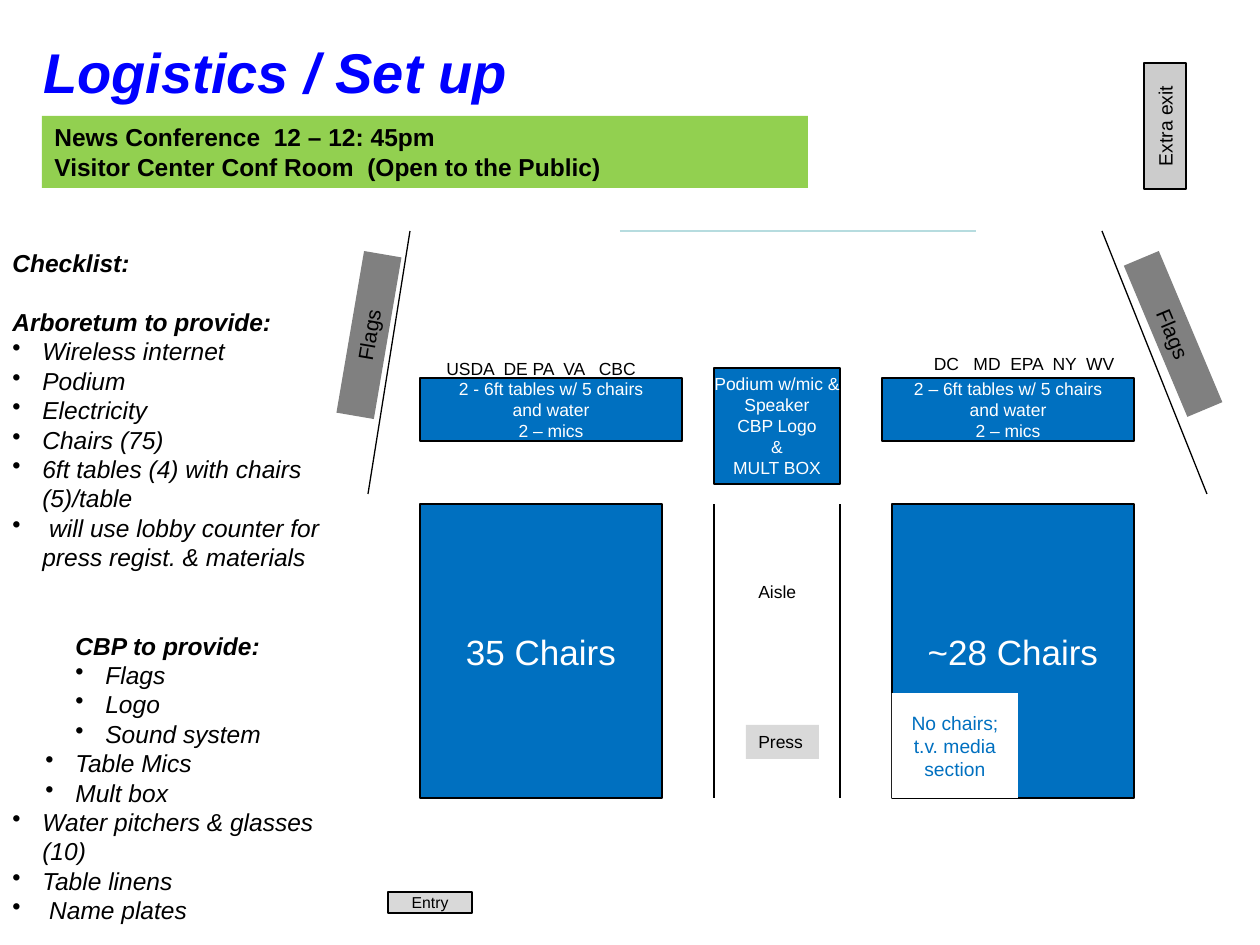
import pptx
import pptx.util
import pptx.dml.color
import pptx.enum.shapes
import pptx.enum.text
from lxml import etree

PX = 914400 / 126
RGB = pptx.dml.color.RGBColor
BLACK, WHITE = RGB(0, 0, 0), RGB(255, 255, 255)
BLUE, TITLE_BLUE = RGB(0x00, 0x70, 0xC0), RGB(0, 0, 255)
GREEN, TEAL = RGB(0x92, 0xD0, 0x50), RGB(0xB6, 0xDC, 0xDF)
LIGHT, SILVER, GRAY = RGB(0xD9, 0xD9, 0xD9), RGB(0xCC, 0xCC, 0xCC), RGB(0x80, 0x80, 0x80)

TITLE = "Logistics / Set up"
SESSION = ["News Conference  12 – 12: 45pm", "Visitor Center Conf Room  (Open to the Public)"]

# heading, gap above in points, left edge in px, items as (text, bullet left edge in px)
CHECKLIST = [
    ("Checklist:", 0, 0, []),
    ("Arboretum to provide:", 16.8, 0, [
        ("Wireless internet", 0), ("Podium", 0), ("Electricity", 0), ("Chairs (75)", 0),
        ("6ft tables (4) with chairs (5)/table", 0),
        (" will use lobby counter for  press regist. & materials", 0)]),
    ("CBP to provide:", 33.6, 63, [
        ("Flags", 63), ("Logo", 63), ("Sound system", 63),
        ("Table Mics", 33), ("Mult box", 33),
        ("Water pitchers & glasses (10)", 0), ("Table linens", 0), (" Name plates", 0)]),
]
BULLET_INDENT = 30

# lines, box in px, fill, text size, text colour, outlined
FURNITURE = [
    (["2 - 6ft tables w/ 5 chairs", "and water", "2 – mics"], (420, 378, 262, 63), BLUE, 10, WHITE, True),
    (["Podium w/mic &", "Speaker", "CBP Logo", "&", "MULT BOX"], (714, 368, 126, 116), BLUE, 10, WHITE, True),
    (["2 – 6ft tables w/ 5 chairs", "and water", "2 – mics"], (882, 378, 252, 63), BLUE, 10, WHITE, True),
    (["35 Chairs"], (420, 504, 242, 294), BLUE, 20, WHITE, True),
    (["~28 Chairs"], (892, 504, 242, 294), BLUE, 20, WHITE, True),
    (["No chairs; t.v. media section"], (892, 693, 126, 105), WHITE, 11, BLUE, False),
    (["Entry"], (388, 892, 84, 21), LIGHT, 9, BLACK, True),
]
SEATED = [("USDA  DE PA  VA   CBC", (399, 347, 284, 42)), ("DC   MD  EPA  NY  WV", (882, 347, 284, 32))]
FLAGS = [((1091, 315, 164, 38), 67.2), ((287, 316, 164, 38), 279.7)]

# x1, y1, x2, y2 in px, colour
WALLS = [(368, 494, 410, 231, BLACK), (1207, 494, 1102, 231, BLACK),
         (714, 504, 714, 798, BLACK), (840, 504, 840, 798, BLACK),
         (620, 231, 976, 231, TEAL)]

ANCHOR = pptx.enum.text.MSO_ANCHOR
ALIGN = pptx.enum.text.PP_ALIGN


def emu(*lengths):
    return [round(length * PX) for length in lengths]


def add_paragraph(frame, text, size, color, align=ALIGN.LEFT, bold=False, italic=False):
    """Fill the frame's first paragraph if it is still empty, else append one."""
    paragraph = frame.paragraphs[-1]
    if paragraph.runs:
        paragraph = frame.add_paragraph()
    paragraph.alignment = align
    run = paragraph.add_run()
    run.text = text
    font = run.font
    font.name, font.size, font.bold, font.italic = "Arial", pptx.util.Pt(size), bold, italic
    font.color.rgb = color
    return paragraph


def indent(paragraph, left, bulleted):
    properties = paragraph._p.get_or_add_pPr()
    hanging = BULLET_INDENT if bulleted else 0
    margin, first = emu(left + hanging, -hanging)
    properties.set("marL", str(margin))
    properties.set("indent", str(first))
    if bulleted:
        namespace = pptx.oxml.ns.qn("a:buChar")
        etree.SubElement(properties, namespace).set("char", "•")


def add_text(slide, box, lines, size, color, align=ALIGN.LEFT, anchor=ANCHOR.TOP, wrap=True, **style):
    frame = slide.shapes.add_textbox(*emu(*box)).text_frame
    frame.word_wrap, frame.vertical_anchor = wrap, anchor
    for line in lines:
        add_paragraph(frame, line, size, color, align, **style)
    return frame


def add_block(slide, box, fill, lines, size, color, outlined=False, align=ALIGN.CENTER,
              anchor=ANCHOR.MIDDLE, wrap=False, rotation=0, bold=False):
    block = slide.shapes.add_shape(pptx.enum.shapes.MSO_SHAPE.RECTANGLE, *emu(*box))
    block.shadow.inherit = False
    block.rotation = rotation
    block.fill.solid()
    block.fill.fore_color.rgb = fill
    if outlined:
        block.line.color.rgb = BLACK
        block.line.width = pptx.util.Pt(0.75)
    else:
        block.line.fill.background()
    frame = block.text_frame
    frame.word_wrap, frame.vertical_anchor = wrap, anchor
    for line in lines:
        add_paragraph(frame, line, size, color, align, bold)


def add_wall(slide, x1, y1, x2, y2, color):
    wall = slide.shapes.add_connector(pptx.enum.shapes.MSO_CONNECTOR.STRAIGHT, *emu(x1, y1, x2, y2))
    wall.line.color.rgb = color
    wall.line.width = pptx.util.Pt(0.75)
    etree.SubElement(wall._element.spPr, pptx.oxml.ns.qn("a:effectLst"))


def add_checklist(slide):
    frame = add_text(slide, (0, 242, 368, 832), [], 14, BLACK)
    for heading, gap, left, items in CHECKLIST:
        paragraph = add_paragraph(frame, heading, 14, BLACK, bold=True, italic=True)
        paragraph.space_before = pptx.util.Pt(gap)
        indent(paragraph, left, False)
        for item, bullet_left in items:
            indent(add_paragraph(frame, item, 14, BLACK, italic=True), bullet_left, True)


def main():
    deck = pptx.Presentation()
    deck.slide_width, deck.slide_height = emu(1260, 945)
    slide = deck.slides.add_slide(deck.slide_layouts[6])

    add_block(slide, (42, 116, 766, 72), GREEN, SESSION, 14, BLACK,
              align=ALIGN.LEFT, anchor=ANCHOR.TOP, wrap=True, bold=True)
    title = add_text(slide, (31, 31, 1176, 79), [TITLE], 32, TITLE_BLUE, bold=True, italic=True)
    title.paragraphs[0].space_before = pptx.util.Pt(3)

    for wall in WALLS:
        add_wall(slide, *wall)
    for lines, box, fill, size, color, outlined in FURNITURE:
        add_block(slide, box, fill, lines, size, color, outlined, wrap=not outlined)
    for box, rotation in FLAGS:
        add_block(slide, box, GRAY, ["Flags"], 12, BLACK, anchor=ANCHOR.TOP, wrap=True, rotation=rotation)
    add_block(slide, (1102, 105, 126, 42), SILVER, ["Extra exit"], 11, BLACK, True, rotation=270)
    add_block(slide, (746, 725, 73, 34), LIGHT, ["Press"], 10, BLACK,
              align=ALIGN.LEFT, anchor=ANCHOR.TOP, wrap=True)
    add_text(slide, (746, 575, 63, 34), ["Aisle"], 10, BLACK, wrap=False)
    for members, box in SEATED:
        add_text(slide, box, [members], 10, BLACK, ALIGN.CENTER, ANCHOR.MIDDLE, False)
    add_checklist(slide)
    deck.save("out.pptx")


if __name__ == "__main__":
    main()
